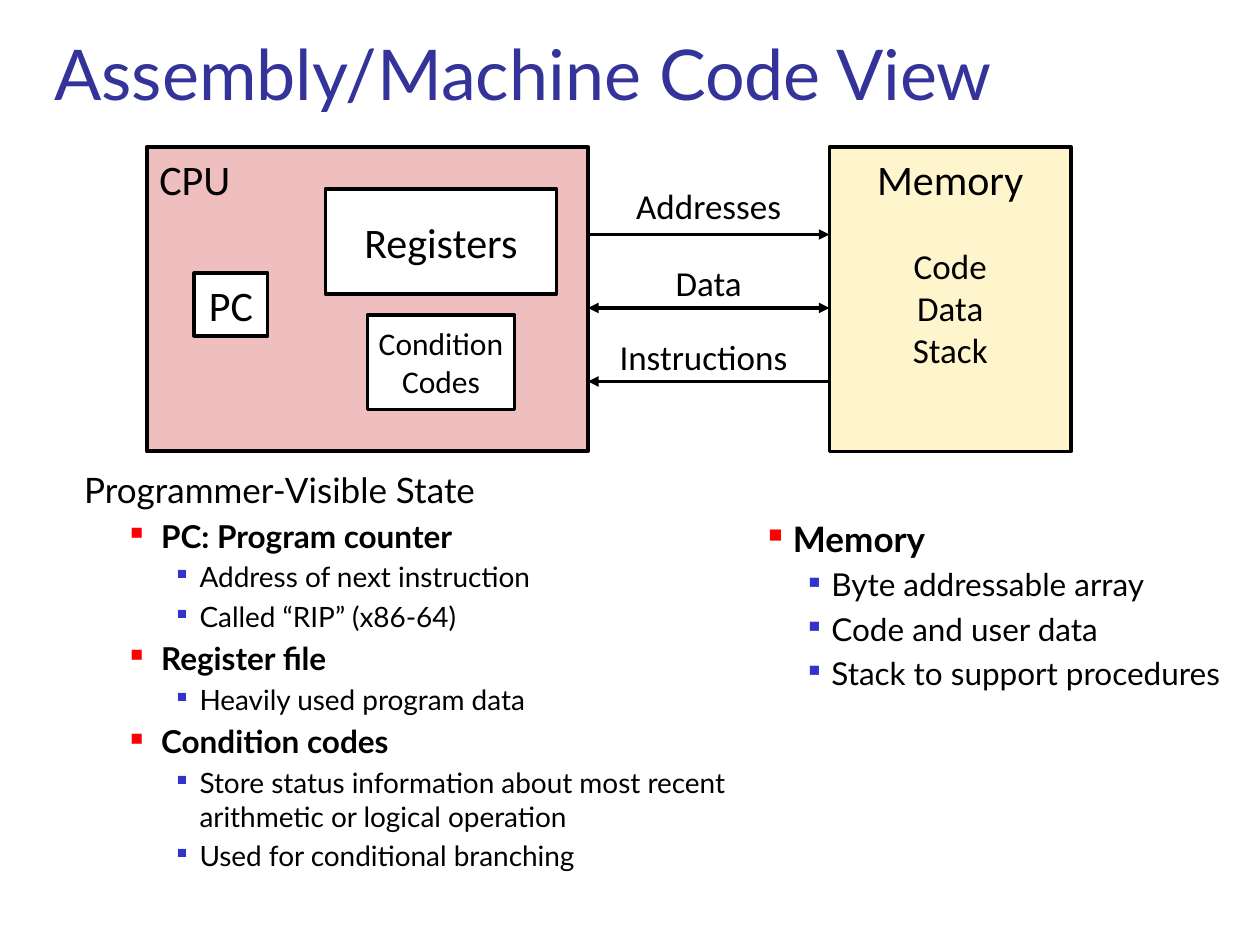
import pptx
import pptx.util
import pptx.dml.color
import pptx.enum.shapes
import pptx.enum.text
import pptx.oxml
import pptx.oxml.ns
import lxml.etree

Pt = pptx.util.Pt
RGBColor = pptx.dml.color.RGBColor
ALIGN = pptx.enum.text.PP_ALIGN
ANCHOR = pptx.enum.text.MSO_ANCHOR

BLACK = RGBColor(0x00, 0x00, 0x00)
WHITE = RGBColor(0xFF, 0xFF, 0xFF)
TITLE_BLUE = RGBColor(0x33, 0x33, 0x99)
BULLET_BLUE = RGBColor(0x33, 0x33, 0xCC)
RED = RGBColor(0xFF, 0x00, 0x00)
PINK = RGBColor(0xEF, 0xBF, 0xBF)
CREAM = RGBColor(0xFF, 0xF5, 0xCC)


def add_element(parent, tag, **attrs):
    el = lxml.etree.SubElement(parent, pptx.oxml.ns.qn(tag))
    for name, value in attrs.items():
        el.set(name, str(value))
    return el


class Deck:
    """Diagram and outline style, applied to the current slide."""

    diagram_font = "Calibri"
    outline_font = "Lato"
    # level: bullet colour, bullet size in percent
    bullets = {1: (RED, 55), 2: (BULLET_BLUE, 50)}

    def __init__(self, width, height):
        self.prs = pptx.Presentation()
        self.prs.slide_width, self.prs.slide_height = Pt(width), Pt(height)
        self.s = self.prs.slides.add_slide(self.prs.slide_layouts[6])

    def set_text(self, sp, text, size, font, color=BLACK, align=ALIGN.CENTER,
                 anchor=ANCHOR.TOP, wrap=True):
        tf = sp.text_frame
        tf.text = text
        tf.word_wrap = wrap
        tf.vertical_anchor = anchor
        for p in tf.paragraphs:
            p.alignment = align
            for r in p.runs:
                r.font.name, r.font.size = font, Pt(size)
                r.font.color.rgb = color

    def box(self, x, y, w, h, text, fill, size=24, line=2, **style):
        sp = self.s.shapes.add_shape(pptx.enum.shapes.MSO_SHAPE.RECTANGLE,
                                     Pt(x), Pt(y), Pt(w), Pt(h))
        sp.shadow.inherit = False
        sp.fill.solid()
        sp.fill.fore_color.rgb = fill
        sp.line.color.rgb = BLACK
        sp.line.width = Pt(line)
        self.set_text(sp, text, size, self.diagram_font, **style)

    def label(self, x, y, w, h, text, size=20, font=diagram_font, **style):
        sp = self.s.shapes.add_textbox(Pt(x), Pt(y), Pt(w), Pt(h))
        self.set_text(sp, text, size, font, **style)

    def arrow(self, x1, x2, y, ends):
        """Horizontal line with triangles at the named ends (headEnd, tailEnd)."""
        cn = self.s.shapes.add_connector(pptx.enum.shapes.MSO_CONNECTOR.STRAIGHT,
                                         Pt(x1), Pt(y), Pt(x2), Pt(y))
        cn.line.color.rgb = BLACK
        cn.line.width = Pt(2)
        spPr = cn.element.spPr
        for end in ends:
            add_element(spPr.get_or_add_ln(), "a:" + end, type="triangle")
        add_element(spPr, "a:effectLst")

    def outline(self, x, y, w, h, items, sizes, indents):
        """Bulleted list of (level, text); indents give (margin, hanging) by level."""
        sp = self.s.shapes.add_textbox(Pt(x), Pt(y), Pt(w), Pt(h))
        self.set_text(sp, "\n".join(text for _, text in items), 20,
                      self.outline_font, align=ALIGN.LEFT)
        for p, (level, _) in zip(sp.text_frame.paragraphs, items):
            p.level = level
            font = p.runs[0].font
            font.size, font.bold = Pt(sizes[level]), level == 1
            pPr = p._p.get_or_add_pPr()
            margin, hanging = indents[level]
            pPr.set("marL", str(Pt(margin)))
            pPr.set("indent", str(-Pt(hanging)))
            add_element(add_element(pPr, "a:spcBef"), "a:spcPct", val=20000)
            if level in self.bullets:
                color, percent = self.bullets[level]
                add_element(add_element(pPr, "a:buClr"), "a:srgbClr", val=color)
                add_element(pPr, "a:buSzPct", val=percent * 1000)
                add_element(pPr, "a:buChar", char="■")


def main():
    d = Deck(720, 540)
    d.label(24, 24, 569, 45, "Assembly/Machine Code View", 40, d.outline_font,
            color=TITLE_BLUE, align=ALIGN.LEFT, anchor=ANCHOR.BOTTOM)

    cpu_right, memory_left = 336, 474
    d.box(84, 84, 252, 174, "CPU", PINK, line=2.25, align=ALIGN.LEFT)
    for x, y, w, h, text, size in [
        (111, 156, 42, 36, "PC", 24),
        (186, 108, 132, 60, "Registers", 24),
        (210, 180, 84, 54, "Condition\nCodes", 18),
    ]:
        d.box(x, y, w, h, text, WHITE, size, anchor=ANCHOR.MIDDLE, wrap=False)
    d.box(memory_left, 84, 138, 174, "Memory", CREAM, wrap=False)
    d.label(498, 136, 90, 80, "Code\nData\nStack")

    for y, label_y, label_w, text, ends in [
        (134, 102, 138, "Addresses", ["tailEnd"]),
        (176, 146, 138, "Data", ["headEnd", "tailEnd"]),
        (218, 188, 132, "Instructions", ["headEnd"]),
    ]:
        d.arrow(cpu_right, memory_left, y, ends)
        d.label(cpu_right, label_y, label_w, 31, text)

    d.outline(41, 264, 382, 243, [
        (0, "Programmer-Visible State"),
        (1, "PC: Program counter"),
        (2, "Address of next instruction"),
        (2, "Called “RIP” (x86-64)"),
        (1, "Register file"),
        (2, "Heavily used program data"),
        (1, "Condition codes"),
        (2, "Store status information about most recent "
            "arithmetic or logical operation"),
        (2, "Used for conditional branching"),
    ], sizes=(20, 18, 16), indents=((18, 18), (44, 17.5), (66, 13)))
    d.outline(423, 292, 285, 124, [
        (1, "Memory"),
        (2, "Byte addressable array"),
        (2, "Code and user data"),
        (2, "Stack to support procedures"),
    ], sizes=(20, 20, 18), indents=((0, 0), (23, 14), (45, 13)))

    d.prs.save("out.pptx")


if __name__ == "__main__":
    main()
